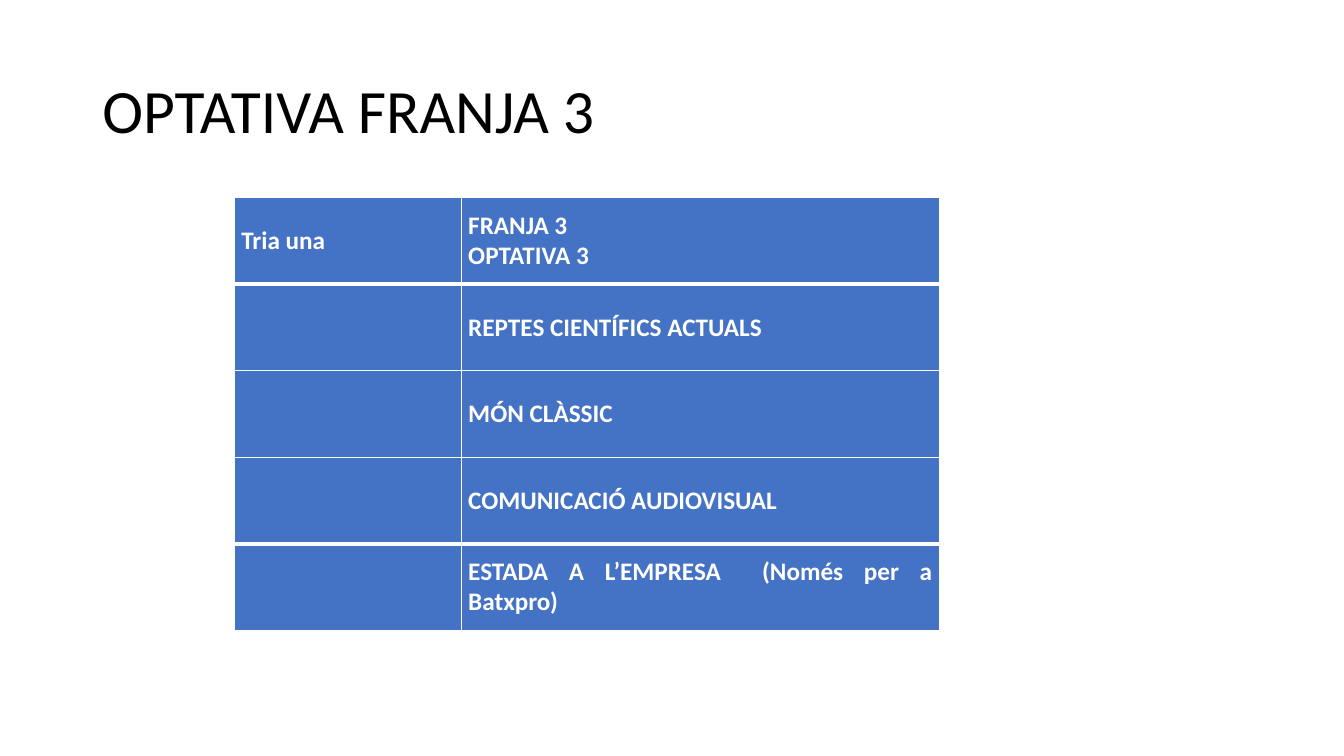
from lxml import etree
from pptx import Presentation
from pptx.dml.color import RGBColor
from pptx.enum.text import MSO_ANCHOR, PP_ALIGN
from pptx.oxml.ns import qn
from pptx.util import Cm, Pt

MIDDLE = MSO_ANCHOR.MIDDLE
LEFT = PP_ALIGN.LEFT
JUSTIFY = PP_ALIGN.JUSTIFY

COLORS = {"ink": "000000", "white": "FFFFFF", "blue": "4472C4"}
COLUMN_WIDTHS = [5.72, 12.06]
ROW_HEIGHT = 2.18
HEAVY_EDGES = {1, 4}
ROWS = [
    (["Tria una"], ["FRANJA 3", "OPTATIVA 3"], LEFT),
    ([], ["REPTES CIENTÍFICS ACTUALS"], JUSTIFY),
    ([], ["MÓN CLÀSSIC"], JUSTIFY),
    ([], ["COMUNICACIÓ AUDIOVISUAL"], LEFT),
    ([], ["ESTADA A L’EMPRESA  (Només per a Batxpro)"], JUSTIFY),
]


class SlideBuilder:
    """Holds the style and the current page, and draws each kind of element."""

    def __init__(self, page, font="Calibri"):
        self.page = page
        self.font = font

    def color(self, name):
        return RGBColor.from_string(COLORS[name])

    def add_lines(self, frame, lines, size, color, bold=False, align=LEFT, spacing=1.0):
        for index, line in enumerate(lines):
            para = frame.add_paragraph() if index else frame.paragraphs[0]
            para.alignment = align
            para.line_spacing = spacing
            span = para.add_run()
            span.text = line
            span.font.name = self.font
            span.font.size = Pt(size)
            span.font.bold = bold
            span.font.color.rgb = self.color(color)

    def title(self, text, left, top, width, height):
        box = self.page.shapes.add_textbox(Cm(left), Cm(top), Cm(width), Cm(height))
        box.text_frame.word_wrap = True
        box.text_frame.vertical_anchor = MIDDLE
        self.add_lines(box.text_frame, [text], 44, "ink", spacing=0.9)

    def borders(self, cell, widths):
        properties = cell._tc.get_or_add_tcPr()
        for index, (side, width) in enumerate(widths.items()):
            line = etree.Element(qn(f"a:ln{side}"), w=str(Pt(width)))
            fill = etree.SubElement(line, qn("a:solidFill"))
            etree.SubElement(fill, qn("a:srgbClr"), val=COLORS["white"])
            properties.insert(index, line)

    def cell(self, cell, lines, align, widths):
        cell.fill.solid()
        cell.fill.fore_color.rgb = self.color("blue")
        cell.vertical_anchor = MIDDLE
        cell.margin_left = cell.margin_right = Cm(0.18)
        cell.margin_top = cell.margin_bottom = 0
        self.add_lines(cell.text_frame, lines, 18, "white", bold=True, align=align)
        self.borders(cell, widths)

    def table(self, rows, left, top):
        frame = self.page.shapes.add_table(
            len(rows), len(COLUMN_WIDTHS), Cm(left), Cm(top),
            Cm(sum(COLUMN_WIDTHS)), Cm(ROW_HEIGHT * len(rows)))
        table = frame.table
        for column, width in zip(table.columns, COLUMN_WIDTHS):
            column.width = Cm(width)
        for index, (*texts, align) in enumerate(rows):
            table.rows[index].height = Cm(ROW_HEIGHT)
            above, below = (3 if edge in HEAVY_EDGES else 1 for edge in (index, index + 1))
            widths = {"L": 1, "R": 1, "T": above, "B": below}
            for cell, lines in zip(table.rows[index].cells, texts):
                self.cell(cell, lines, align, widths)


def main():
    deck = Presentation()
    deck.slide_width = Cm(33.87)
    deck.slide_height = Cm(19.05)
    builder = SlideBuilder(deck.slides.add_slide(deck.slide_layouts[6]))
    builder.title("OPTATIVA FRANJA 3", 2.33, 1.01, 29.21, 3.68)
    builder.table(ROWS, 5.9, 4.98)
    deck.save("out.pptx")


if __name__ == "__main__":
    main()
